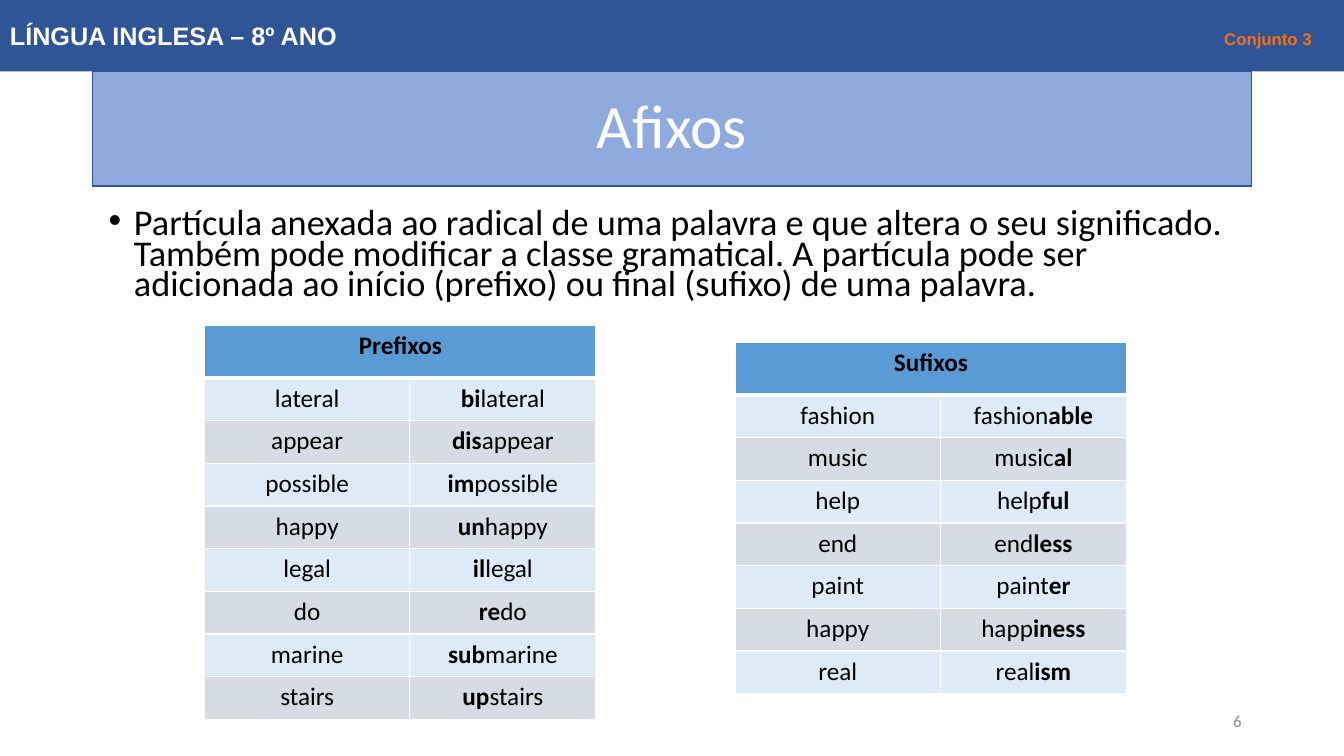
import pptx
import pptx.dml.color
import pptx.enum.shapes
import pptx.enum.text
import pptx.oxml
import pptx.oxml.ns
import pptx.util

Pt = pptx.util.Pt
Align = pptx.enum.text.PP_ALIGN
Anchor = pptx.enum.text.MSO_ANCHOR

PREFIX = [
    ("lateral", "bi", "lateral"),
    ("appear", "dis", "appear"),
    ("possible", "im", "possible"),
    ("happy", "un", "happy"),
    ("legal", "il", "legal"),
    ("do", "re", "do"),
    ("marine", "sub", "marine"),
    ("stairs", "up", "stairs"),
]
SUFFIX = [
    ("fashion", "fashion", "able"),
    ("music", "music", "al"),
    ("help", "help", "ful"),
    ("end", "end", "less"),
    ("paint", "paint", "er"),
    ("happy", "happ", "iness"),
    ("real", "real", "ism"),
]
BODY = (
    "Partícula anexada ao radical de uma palavra e que altera o seu significado. "
    "Também pode modificar a classe gramatical. A partícula pode ser adicionada "
    "ao início (prefixo) ou final (sufixo) de uma palavra."
)


def color(code):
    return pptx.dml.color.RGBColor.from_string(code)


def style(item, form):
    for name, value in form.items():
        setattr(item, name, value)


def paint(item, code):
    item.fill.solid()
    item.fill.fore_color.rgb = color(code)


def node(xml):
    space = pptx.oxml.ns.nsdecls("a")
    return pptx.oxml.parse_xml(xml.replace(" ", f" {space} ", 1))


def write(para, text, size, code="000000", bold=False, face="Calibri"):
    run = para.add_run()
    run.text = text
    style(run.font, {"size": Pt(size), "bold": bold, "name": face})
    run.font.color.rgb = color(code)


def setup(shape, align, anchor):
    style(shape.text_frame, {"word_wrap": True, "vertical_anchor": anchor})
    para = shape.text_frame.paragraphs[0]
    para.alignment = align
    return para


def add_bar(slide, box, fill, align, edge=None):
    kind = pptx.enum.shapes.MSO_SHAPE.RECTANGLE
    shape = slide.shapes.add_shape(kind, *map(Pt, box))
    shape.shadow.inherit = False
    paint(shape, fill)
    if edge:
        shape.line.color.rgb = color(edge)
        shape.line.width = Pt(1)
    else:
        shape.line.fill.background()
    return setup(shape, align, Anchor.MIDDLE)


def add_text(slide, box, align, anchor):
    shape = slide.shapes.add_textbox(*map(Pt, box))
    return setup(shape, align, anchor)


def set_tab(para, place):
    props = para._p.get_or_add_pPr()
    props.append(node(f'<a:tabLst ><a:tab pos="{Pt(place)}" algn="r"/></a:tabLst>'))


def set_bullet(para, indent):
    props = para._p.get_or_add_pPr()
    style_marks = {"marL": Pt(indent), "indent": -Pt(indent)}
    for name, value in style_marks.items():
        props.set(name, str(value))
    props.append(node('<a:buFont typeface="Arial"/>'))
    props.append(node('<a:buChar char="•"/>'))


def fill_cell(cell, fill, parts, top=1, base=1):
    props = cell._tc.get_or_add_tcPr()
    for side, width in zip("LRTB", (1, 1, top, base)):
        props.append(node(
            f'<a:ln{side} w="{Pt(width)}"><a:solidFill>'
            f'<a:srgbClr val="FFFFFF"/></a:solidFill></a:ln{side}>'
        ))
    paint(cell, fill)
    para = cell.text_frame.paragraphs[0]
    para.alignment = Align.CENTER
    for text, bold in parts:
        write(para, text, 18, bold=bold)


def add_grid(slide, left, top, head, words, front):
    high, row_high = 37.4, 30.5
    widths = (146.4, 133.2)
    size = (sum(widths), high + row_high * len(words))
    frame = slide.shapes.add_table(len(words) + 1, 2, *map(Pt, (left, top, *size)))
    table = frame.table
    for col, width in zip(table.columns, widths):
        col.width = Pt(width)
    for index, row in enumerate(table.rows):
        row.height = Pt(row_high if index else high)
    table.cell(0, 0).merge(table.cell(0, 1))
    fill_cell(table.cell(0, 0), "5B9BD5", [(head, True)], base=3)
    fill_cell(table.cell(0, 1), "5B9BD5", [], base=3)
    for index, (root, start, end) in enumerate(words, 1):
        fill = "DEEBF7" if index % 2 else "D6DCE5"
        top_line = 3 if index == 1 else 1
        fill_cell(table.cell(index, 0), fill, [(root, False)], top_line)
        pair = [(start, front), (end, not front)]
        fill_cell(table.cell(index, 1), fill, pair, top_line)


def main():
    deck = pptx.Presentation()
    style(deck, {"slide_width": Pt(960), "slide_height": Pt(540)})
    slide = deck.slides.add_slide(deck.slide_layouts[6])

    title = add_bar(slide, (66, 51, 828, 82), "8FAADC", Align.CENTER, "2F5597")
    title.line_spacing = 0.9
    write(title, "Afixos", 44, "FFFFFF")

    page = add_text(slide, (678, 500.5, 216, 28.8), Align.RIGHT, Anchor.MIDDLE)
    write(page, "6", 12, "8C8C8C")

    header = add_bar(slide, (0, 0, 960, 51), "2F5597", Align.LEFT)
    set_tab(header, 930)
    write(header, "LÍNGUA INGLESA – 8º ANO\t", 18, "FFFFFF", True, "Arial")
    write(header, "Conjunto 3", 12, "F47116", True, "Arial")

    add_grid(slide, 146.2, 232.6, "Prefixos", PREFIX, True)
    add_grid(slide, 525.2, 244.8, "Sufixos", SUFFIX, False)

    body = add_text(slide, (70.6, 147.6, 818.6, 77), Align.LEFT, Anchor.TOP)
    set_bullet(body, 18)
    body.line_spacing = 0.7
    write(body, BODY, 25.9)

    deck.save("out.pptx")


if __name__ == "__main__":
    main()
